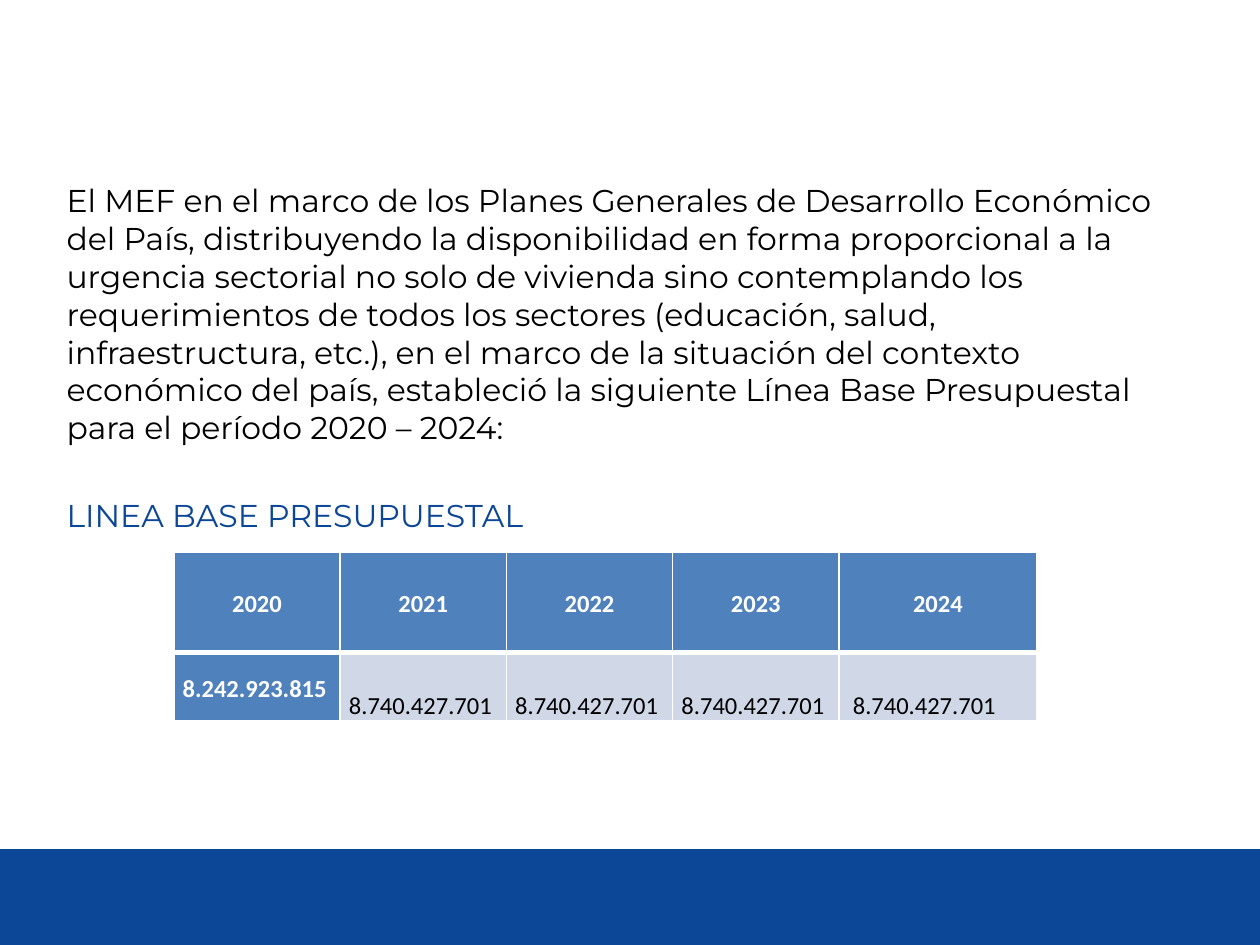
from lxml.etree import SubElement
from pptx import Presentation
from pptx.dml.color import RGBColor
from pptx.enum.shapes import MSO_SHAPE
from pptx.enum.text import MSO_ANCHOR, PP_ALIGN
from pptx.oxml.ns import qn
from pptx.util import Inches, Pt

NAVY = RGBColor(0x0B, 0x46, 0x97)
BLUE = RGBColor(0x4F, 0x81, 0xBD)
PALE = RGBColor(0xD0, 0xD8, 0xE8)
BLACK = RGBColor(0, 0, 0)
WHITE = RGBColor(0xFF, 0xFF, 0xFF)

INTRO = (
    "El MEF en el marco de los Planes Generales de Desarrollo Económico del País, "
    "distribuyendo la disponibilidad en forma proporcional a la urgencia sectorial "
    "no solo de vivienda sino contemplando los requerimientos de todos los sectores "
    "(educación, salud, infraestructura, etc.), en el marco de la situación del "
    "contexto económico del país, estableció la siguiente Línea Base Presupuestal "
    "para el período 2020 – 2024:"
)
HEADING = "LINEA BASE PRESUPUESTAL"
BUDGET = {
    "2020": "8.242.923.815",
    "2021": "8.740.427.701",
    "2022": "8.740.427.701",
    "2023": "8.740.427.701",
    "2024": "8.740.427.701",
}
COLUMN_WIDTHS = (1.32, 1.32, 1.32, 1.32, 1.57)
ROW_HEIGHTS = (0.8, 0.54)


def add_footer_band(page, left, top, width, height):
    band = page.shapes.add_shape(MSO_SHAPE.RECTANGLE, left, top, width, height)
    band.shadow.inherit = False
    band.fill.solid()
    band.fill.fore_color.rgb = NAVY
    band.line.fill.background()


def add_body_text(page, left, top, width, height):
    frame = page.shapes.add_textbox(left, top, width, height).text_frame
    frame.word_wrap = True
    intro = frame.paragraphs[0]
    heading = frame.add_paragraph()
    heading.space_before = Pt(28.5)
    for para, text, color in ((intro, INTRO, BLACK), (heading, HEADING, NAVY)):
        para.text = text
        para.font.name = "Montserrat"
        para.font.size = Pt(18)
        para.font.color.rgb = color


def set_borders(cell, bottom_width):
    """Draw white cell borders; they must come before the fill in the XML."""
    properties = cell._tc.get_or_add_tcPr()
    for side, points in (("L", 1), ("R", 1), ("T", 1), ("B", bottom_width)):
        line = SubElement(properties, qn(f"a:ln{side}"), w=str(Pt(points)))
        fill = SubElement(line, qn("a:solidFill"))
        SubElement(fill, qn("a:srgbClr"), val=str(WHITE))


def format_cell(cell, text, is_header, is_dark):
    set_borders(cell, 3 if is_header else 1)
    cell.fill.solid()
    cell.fill.fore_color.rgb = BLUE if is_dark else PALE
    cell.margin_left = cell.margin_right = Inches(0.07)
    cell.margin_top = cell.margin_bottom = 0
    cell.vertical_anchor = MSO_ANCHOR.MIDDLE if is_dark else MSO_ANCHOR.BOTTOM
    cell.text = text
    para = cell.text_frame.paragraphs[0]
    para.alignment = PP_ALIGN.CENTER if is_header else PP_ALIGN.LEFT
    para.line_spacing = 1.15
    para.font.name = "Calibri"
    para.font.size = Pt(14)
    para.font.bold = is_dark
    para.font.color.rgb = WHITE if is_dark else BLACK


def add_budget_table(page, left, top, width, height):
    table = page.shapes.add_table(2, len(BUDGET), left, top, width, height).table
    for column, inches in zip(table.columns, COLUMN_WIDTHS):
        column.width = Inches(inches)
    for row, inches in zip(table.rows, ROW_HEIGHTS):
        row.height = Inches(inches)
    for index, (year, amount) in enumerate(BUDGET.items()):
        format_cell(table.cell(0, index), year, True, True)
        format_cell(table.cell(1, index), amount, False, index == 0)
    # The last amount sits slightly further from its border
    table.cell(1, len(BUDGET) - 1).margin_left = Inches(0.11)


def main():
    deck = Presentation()
    deck.slide_width, deck.slide_height = Inches(10), Inches(7.5)
    page = deck.slides.add_slide(deck.slide_layouts[6])
    add_footer_band(page, 0, Inches(6.74), deck.slide_width, Inches(0.76))
    add_body_text(page, Inches(0.43), Inches(1.39), Inches(8.99), Inches(4.93))
    add_budget_table(page, Inches(1.38), Inches(4.38),
                     Inches(sum(COLUMN_WIDTHS)), Inches(sum(ROW_HEIGHTS)))
    deck.save("out.pptx")


if __name__ == "__main__":
    main()
